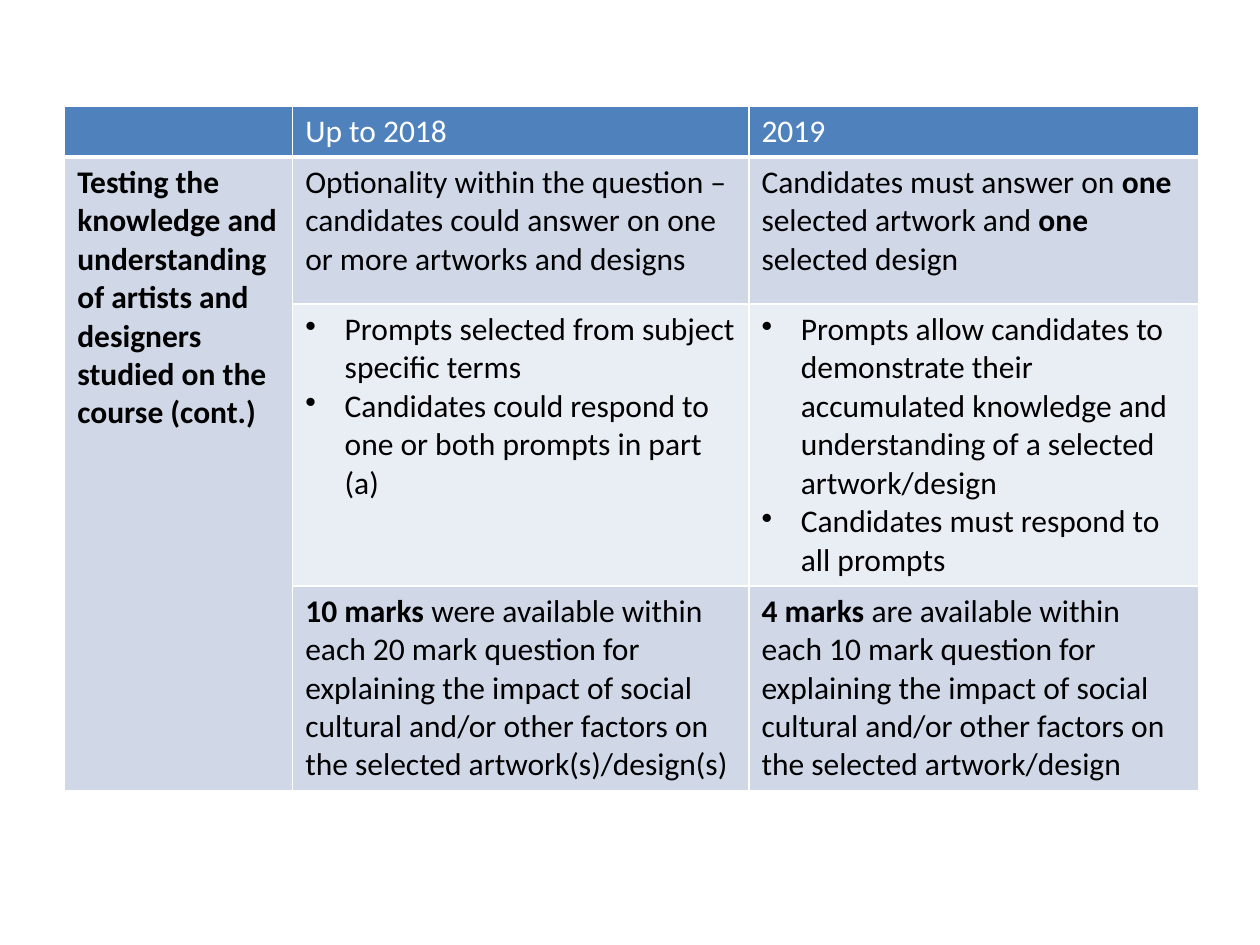
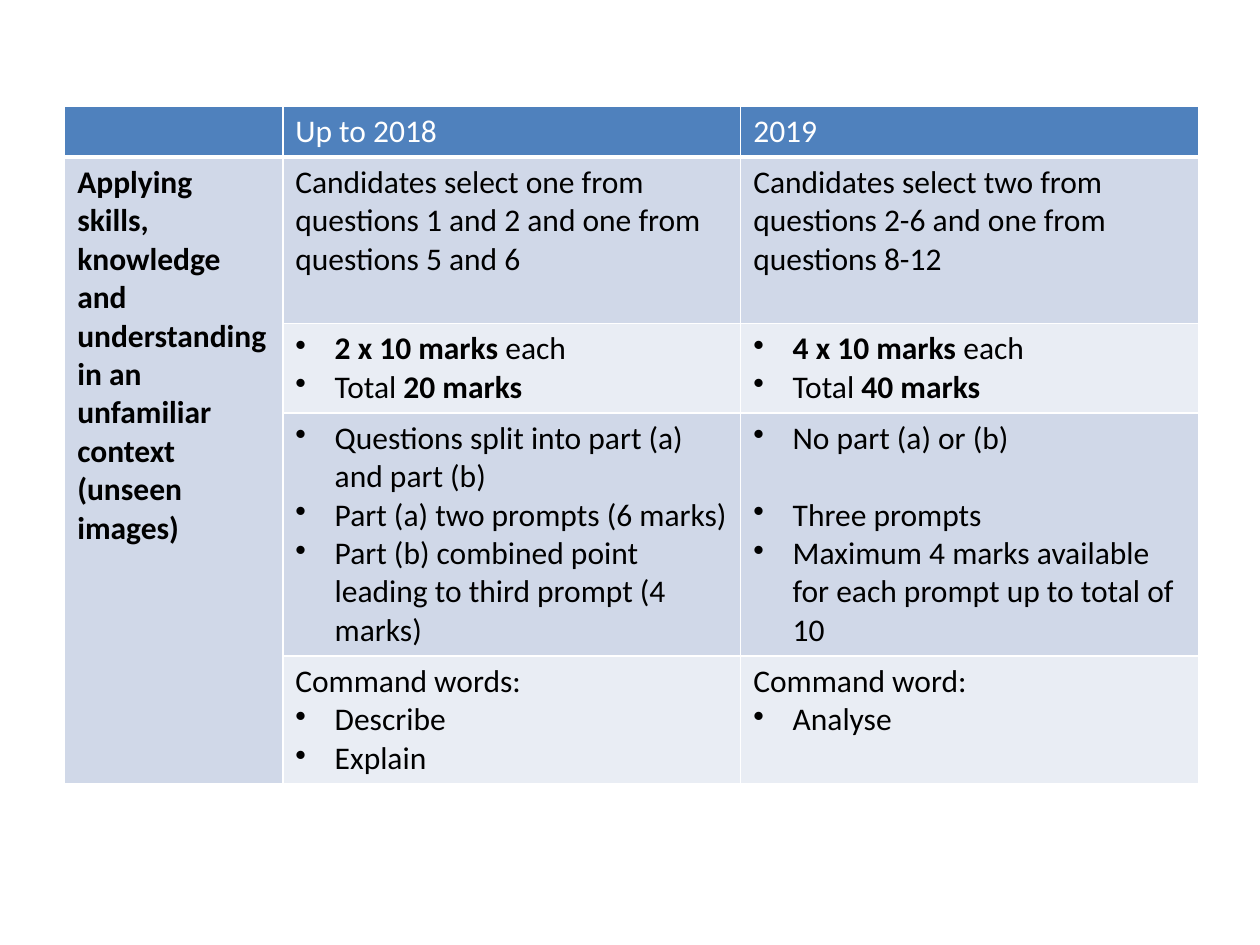
from dataclasses import dataclass

from lxml import etree
from pptx import Presentation
from pptx.dml.color import RGBColor
from pptx.oxml.ns import qn
from pptx.util import Pt

BLANK_LAYOUT = 6


@dataclass(frozen=True)
class Theme:
    font: str = "Calibri"
    size: float = 18
    line_height: float = 21.97
    cell_margins: float = 7.2
    bullet_indent: float = 22.5
    rule: float = 1
    header_rule: float = 3
    white: str = "FFFFFF"
    black: str = "000000"
    header: str = "4F81BD"
    bands: tuple = ("D0D8E8", "E9EDF4")
    table_left: float = 37
    table_top: float = 60.5


@dataclass(frozen=True)
class Item:
    """A paragraph; text between ** marks is bold."""
    text: str
    bullet: bool = True
    lines_after: int = 0


def write_text(frame, items, *, theme, color, bold=False):
    """Fill a text frame with strings (plain) and Items (bulleted by default)."""
    for index, item in enumerate(items):
        if isinstance(item, str):
            item = Item(item, bullet=False)
        paragraph = frame.paragraphs[0] if index == 0 else frame.add_paragraph()
        if item.bullet:
            properties = paragraph._p.get_or_add_pPr()
            indent = Pt(theme.bullet_indent)
            properties.set("marL", str(indent))
            properties.set("indent", str(-indent))
            etree.SubElement(properties, qn("a:buChar"), char="•")
        if item.lines_after:
            paragraph.space_after = Pt(item.lines_after * theme.line_height)
        for part, words in enumerate(item.text.split("**")):
            if not words:
                continue
            run = paragraph.add_run()
            run.text = words
            run.font.name = theme.font
            run.font.size = Pt(theme.size)
            run.font.bold = bold or part % 2 == 1
            run.font.color.rgb = RGBColor.from_string(color)


class Deck:
    def __init__(self, theme):
        self.theme = theme
        self.presentation = Presentation()
        self.presentation.slide_width = Pt(720)
        self.presentation.slide_height = Pt(540)
        self.slide = None

    def new_slide(self):
        layout = self.presentation.slide_layouts[BLANK_LAYOUT]
        self.slide = self.presentation.slides.add_slide(layout)

    def height_of(self, lines):
        return Pt(lines * self.theme.line_height + self.theme.cell_margins)

    def paint_cell(self, cell, fill, bottom):
        """Give a cell white borders and a solid fill."""
        properties = cell._tc.get_or_add_tcPr()
        for side in ("lnL", "lnR", "lnT", "lnB"):
            width = bottom if side == "lnB" else self.theme.rule
            line = etree.SubElement(properties, qn(f"a:{side}"), w=str(Pt(width)))
            solid = etree.SubElement(line, qn("a:solidFill"))
            etree.SubElement(solid, qn("a:srgbClr"), val=self.theme.white)
        cell.fill.solid()
        cell.fill.fore_color.rgb = RGBColor.from_string(fill)

    def comparison(self, topic, column_widths, rows):
        """Add a table of (lines, before, after) rows beside one merged topic cell."""
        theme = self.theme
        heights = [self.height_of(lines) for lines in (1, *(row[0] for row in rows))]
        widths = [Pt(width) for width in column_widths]
        table = self.slide.shapes.add_table(
            len(heights), len(widths), Pt(theme.table_left), Pt(theme.table_top),
            sum(widths), sum(heights)).table
        table.first_row = table.horz_banding = False
        for column, width in zip(table.columns, widths):
            column.width = width
        for row, height in zip(table.rows, heights):
            row.height = height

        contents = [([], ["Up to 2018"], ["2019"])]
        contents += [([], before, after) for _, before, after in rows]
        contents[1] = (topic, *contents[1][1:])
        for r, row in enumerate(contents):
            is_header = r == 0
            for c, items in enumerate(row):
                cell = table.cell(r, c)
                band = 0 if c == 0 else (r - 1) % 2
                self.paint_cell(cell, theme.header if is_header else theme.bands[band],
                                theme.header_rule if is_header else theme.rule)
                write_text(cell.text_frame, items, theme=theme, bold=c == 0,
                           color=theme.white if is_header else theme.black)
        table.cell(1, 0).merge(table.cell(len(rows), 0))

    def save(self):
        self.presentation.save("out.pptx")


def add_artists_and_designers(deck):
    deck.new_slide()
    deck.comparison(
        ["Testing the knowledge and understanding of artists and designers "
         "studied on the course (cont.)"],
        (130.3, 260.7, 257),
        [
            (3.5,
             ["Optionality within the question – candidates could answer on one "
              "or more artworks and designs"],
             ["Candidates must answer on **one** selected artwork and **one** "
              "selected design"]),
            (7,
             [Item("Prompts selected from subject specific terms"),
              Item("Candidates could respond to one or both prompts in part (a)")],
             [Item("Prompts allow candidates to demonstrate their accumulated "
                   "knowledge and understanding of a selected artwork/design"),
              Item("Candidates must respond to all prompts")]),
            (5,
             ["**10 marks **were available within each 20 mark question for "
              "explaining the impact of social cultural and/or other factors on "
              "the selected artwork(s)/design(s)"],
             ["**4 marks **are available within each 10 mark question for "
              "explaining the impact of social cultural and/or other factors on "
              "the selected artwork/design"]),
        ])


def add_unfamiliar_context(deck):
    deck.new_slide()
    deck.comparison(
        ["Applying",
         "skills, knowledge and understanding in an unfamiliar context "
         "(unseen images)"],
        (124.6, 261.7, 261.7),
        [
            (4,
             ["Candidates select one from questions 1 and 2 and one from "
              "questions 5 and 6"],
             ["Candidates select two from questions 2-6 and one from "
              "questions 8-12"]),
            (2,
             [Item("**2 x 10 marks** each"), Item("Total **20 marks**")],
             [Item("**4 x 10 marks** each"), Item("Total **40 marks**")]),
            (6,
             [Item("Questions split into part (a) and part (b)"),
              Item("Part (a) two prompts (6 marks)"),
              Item("Part (b) combined point leading to third prompt (4 marks)")],
             [Item("No part (a) or (b)", lines_after=1),
              Item("Three prompts"),
              Item("Maximum 4 marks available for each prompt up to total of 10")]),
            (3,
             ["Command words:", Item("Describe"), Item("Explain")],
             ["Command word:", Item("Analyse")]),
        ])


def main():
    deck = Deck(Theme())
    add_artists_and_designers(deck)
    add_unfamiliar_context(deck)
    deck.save()


if __name__ == "__main__":
    main()
